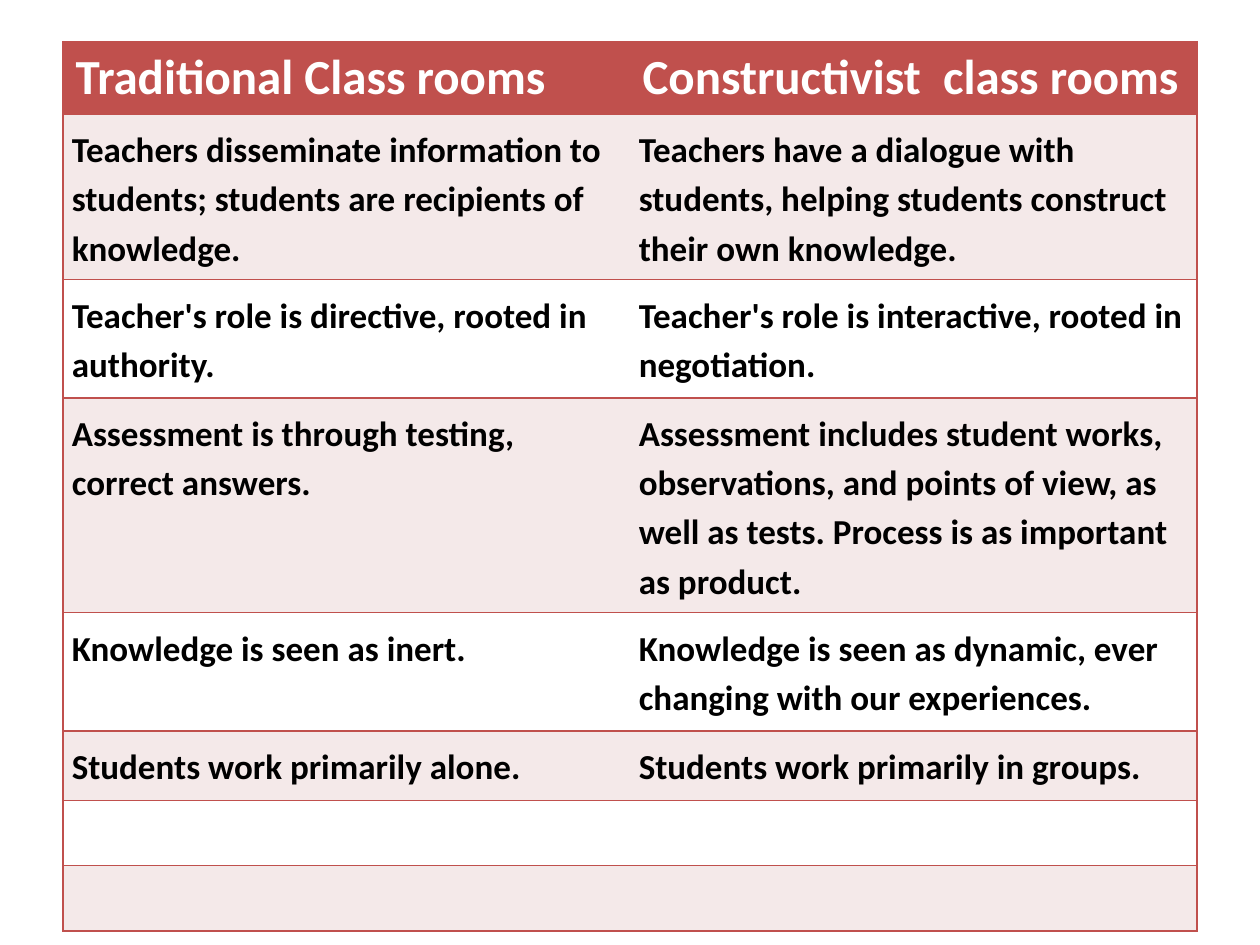
from lxml import etree
from pptx import Presentation
from pptx.dml.color import RGBColor
from pptx.oxml.ns import qn
from pptx.util import Inches, Pt

RED = RGBColor(0xC0, 0x50, 0x4D)
PINK = RGBColor(0xF4, 0xE9, 0xE9)
WHITE = RGBColor(0xFF, 0xFF, 0xFF)
BLACK = RGBColor(0, 0, 0)

ROW_HEIGHTS = [0.52, 0.94, 0.94, 1.34, 0.94, 0.55, 0.52, 0.52]
HEADINGS = ("Traditional Class rooms", "Constructivist  class rooms")
COMPARISONS = [
    ("Teachers disseminate information to students; students are recipients of knowledge.",
     "Teachers have a dialogue with students, helping students construct their own knowledge."),
    ("Teacher's role is directive, rooted in authority.",
     "Teacher's role is interactive, rooted in negotiation."),
    ("Assessment is through testing, correct answers.",
     "Assessment includes student works, observations, and points of view, as well as tests. "
     "Process is as important as product."),
    ("Knowledge is seen as inert.",
     "Knowledge is seen as dynamic, ever changing with our experiences."),
    ("Students work primarily alone.", "Students work primarily in groups."),
]


def set_borders(cell, sides):
    """Rule the given sides (L, R, T, B) in red and clear the others."""
    tcPr = cell._tc.get_or_add_tcPr()
    for i, side in enumerate("LRTB"):
        ln = etree.Element(qn(f"a:ln{side}"), w=str(Pt(1)))
        if side in sides:
            fill = etree.SubElement(ln, qn("a:solidFill"))
            etree.SubElement(fill, qn("a:srgbClr"), val=str(RED))
        else:
            etree.SubElement(ln, qn("a:noFill"))
        tcPr.insert(i, ln)


def set_fill(cell, color):
    """Fill a cell with a solid colour."""
    cell.fill.solid()
    cell.fill.fore_color.rgb = color


def write_cell(cell, text, size, color):
    """Write one bold run in a cell and return its paragraph."""
    p = cell.text_frame.paragraphs[0]
    r = p.add_run()
    r.text = text
    r.font.name = "Calibri"
    r.font.size = Pt(size)
    r.font.bold = True
    r.font.color.rgb = color
    return p


def write_body_cell(cell, text):
    """Write a comparison cell with narrow margins and open line spacing."""
    cell.margin_left = cell.margin_right = Inches(0.07)
    cell.margin_top = cell.margin_bottom = Inches(0.07)
    write_cell(cell, text, 20, BLACK).line_spacing = 1.15


def add_comparison_table(slide):
    """Add the two-column comparison of class rooms."""
    table = slide.shapes.add_table(
        len(ROW_HEIGHTS), 2, Inches(0.5), Inches(0.33), Inches(9), Inches(sum(ROW_HEIGHTS))
    ).table
    for i, (row, height) in enumerate(zip(table.rows, ROW_HEIGHTS)):
        row.height = Inches(height)
        for cell, sides in zip(row.cells, ("LTB", "RTB")):
            set_fill(cell, RED if i == 0 else PINK if i % 2 else WHITE)
            set_borders(cell, sides)
    for j, heading in enumerate(HEADINGS):
        write_cell(table.cell(0, j), heading, 28, WHITE)
    for i, texts in enumerate(COMPARISONS, start=1):
        for j, text in enumerate(texts):
            write_body_cell(table.cell(i, j), text)


def main():
    """Build the slide and save it."""
    prs = Presentation()
    prs.slide_width, prs.slide_height = Inches(10), Inches(7.5)
    add_comparison_table(prs.slides.add_slide(prs.slide_layouts[6]))
    prs.save("out.pptx")


if __name__ == "__main__":
    main()
